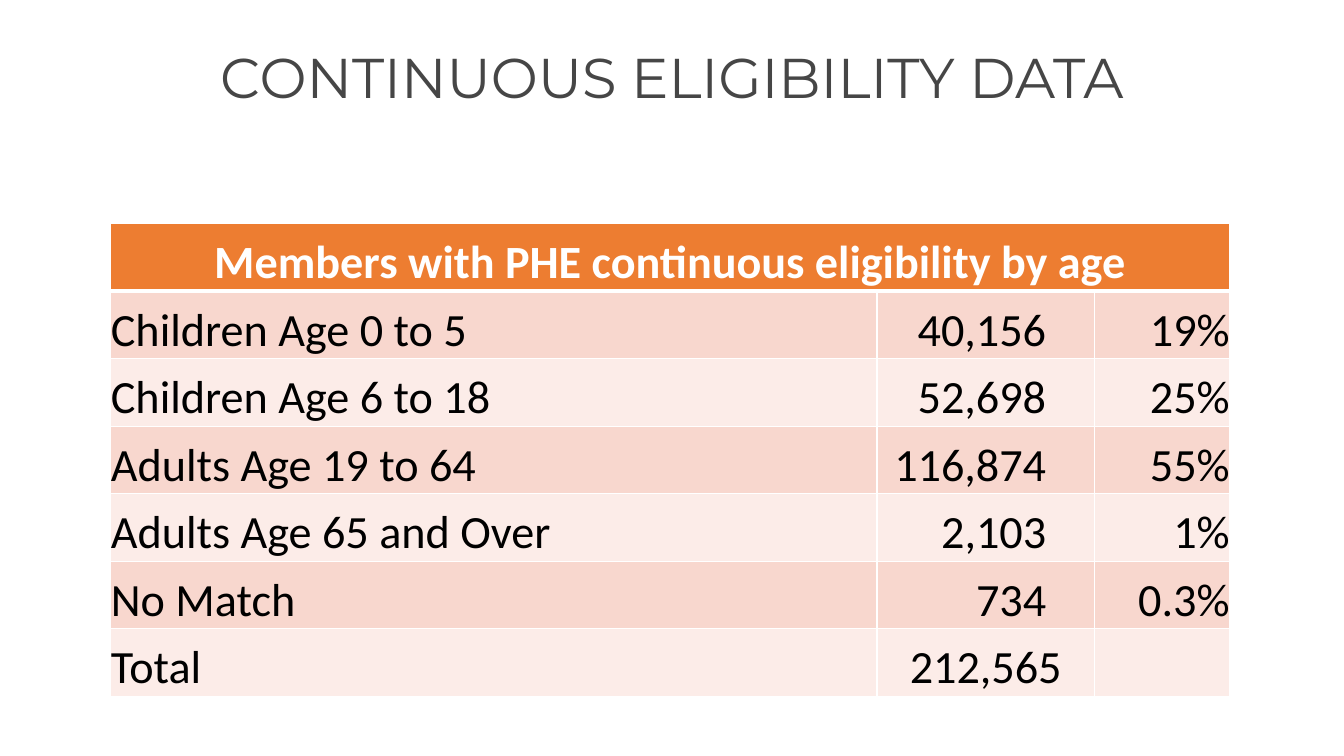
from dataclasses import dataclass
from typing import NamedTuple

from lxml.etree import SubElement
from pptx import Presentation
from pptx.dml.color import RGBColor as Rgb
from pptx.enum.text import MSO_ANCHOR as Anchor, PP_ALIGN as Align
from pptx.oxml.ns import qn
from pptx.util import Emu, Inches, Pt

WIDE, HIGH = Inches(13.33), Inches(7.5)


@dataclass(frozen=True)
class Theme:
    title: str = "464646"
    head: str = "ED7D31"
    odd: str = "F8D7CE"
    even: str = "FCECE8"
    white: str = "FFFFFF"
    black: str = "000000"
    title_font: str = "Montserrat"
    body_font: str = "Calibri"
    title_size: int = 40
    body_size: int = 33
    rule: int = 1
    head_rule: int = 3


class Group(NamedTuple):
    label: str
    count: str
    share: str


THEME = Theme()
HEADING = "Members with PHE continuous eligibility by age"
GROUPS = [
    Group("Children Age 0 to 5", "40,156", "19%"),
    Group("Children Age 6 to 18", "52,698", "25%"),
    Group("Adults Age 19 to 64", "116,874", "55%"),
    Group("Adults Age 65 and Over", "2,103", "1%"),
    Group("No Match", "734", "0.3%"),
    Group("Total", "212,565", ""),
]
LEFT = 8.25
COLUMNS = (57.0, 16.2, 10.05)
ROW = 8.93
ALIGNS = (Align.LEFT, Align.RIGHT, Align.RIGHT)
COUNT_PAD = 3.6


def across(percent: float) -> Emu:
    """Turn a percentage of the slide's width into a length."""
    return Emu(round(WIDE * percent / 100))


def down(percent: float) -> Emu:
    """Turn a percentage of the slide's height into a length."""
    return Emu(round(HIGH * percent / 100))


def write(frame, text: str, font: str, size: int, color: str,
          align: Align, bold: bool = False):
    para = frame.paragraphs[0]
    para.alignment = align
    run = para.add_run()
    run.text = text
    run.font.name = font
    run.font.size = Pt(size)
    run.font.bold = bold
    run.font.color.rgb = Rgb.from_string(color)
    return para


def rule(cell, sides: dict[str, int]) -> None:
    """Draw white cell borders, given points by side."""
    props = cell._tc.get_or_add_tcPr()
    for side, points in sides.items():
        line = SubElement(props, qn(f"a:ln{side}"), w=str(Pt(points)))
        fill = SubElement(line, qn("a:solidFill"))
        SubElement(fill, qn("a:srgbClr"), val=THEME.white)


def style(cell, fill: str, top: int, bottom: int) -> None:
    cell.margin_left = cell.margin_right = 0
    cell.margin_top = cell.margin_bottom = 0
    cell.vertical_anchor = Anchor.BOTTOM
    rule(cell, {"L": THEME.rule, "R": THEME.rule, "T": top, "B": bottom})
    cell.fill.solid()
    cell.fill.fore_color.rgb = Rgb.from_string(fill)


def add_title(slide) -> None:
    title = slide.shapes.title
    title.left, title.top = across(LEFT), down(2.53)
    title.width, title.height = across(83.5), down(16.27)
    title.text_frame.vertical_anchor = Anchor.MIDDLE
    para = write(title.text_frame, "CONTINUOUS ELIGIBILITY DATA",
                 THEME.title_font, THEME.title_size, THEME.title, Align.CENTER)
    para.line_spacing = 0.9


def add_ages(slide) -> None:
    count = len(GROUPS) + 1
    table = slide.shapes.add_table(
        count, len(COLUMNS), across(LEFT), down(29.6),
        across(sum(COLUMNS)), down(ROW * count)).table
    for column, width in zip(table.columns, COLUMNS):
        column.width = across(width)
    for row in table.rows:
        row.height = down(ROW)

    for col in range(len(COLUMNS)):
        style(table.cell(0, col), THEME.head, THEME.rule, THEME.head_rule)
    head = table.cell(0, 0)
    head.merge(table.cell(0, len(COLUMNS) - 1))
    write(head.text_frame, HEADING, THEME.body_font, THEME.body_size,
          THEME.white, Align.CENTER, True)

    for row, group in enumerate(GROUPS, 1):
        fill = THEME.odd if row % 2 else THEME.even
        top = THEME.head_rule if row == 1 else THEME.rule
        for col, text in enumerate(group):
            cell = table.cell(row, col)
            style(cell, fill, top, THEME.rule)
            align = ALIGNS[col]
            if col == 1:
                if group.label == "Total":
                    align = Align.CENTER
                else:
                    cell.margin_right = across(COUNT_PAD)
            if text:
                write(cell.text_frame, text, THEME.body_font,
                      THEME.body_size, THEME.black, align)


def main() -> None:
    deck = Presentation()
    deck.slide_width, deck.slide_height = WIDE, HIGH
    slide = deck.slides.add_slide(deck.slide_layouts[5])
    add_title(slide)
    add_ages(slide)
    deck.save("out.pptx")


if __name__ == "__main__":
    main()
